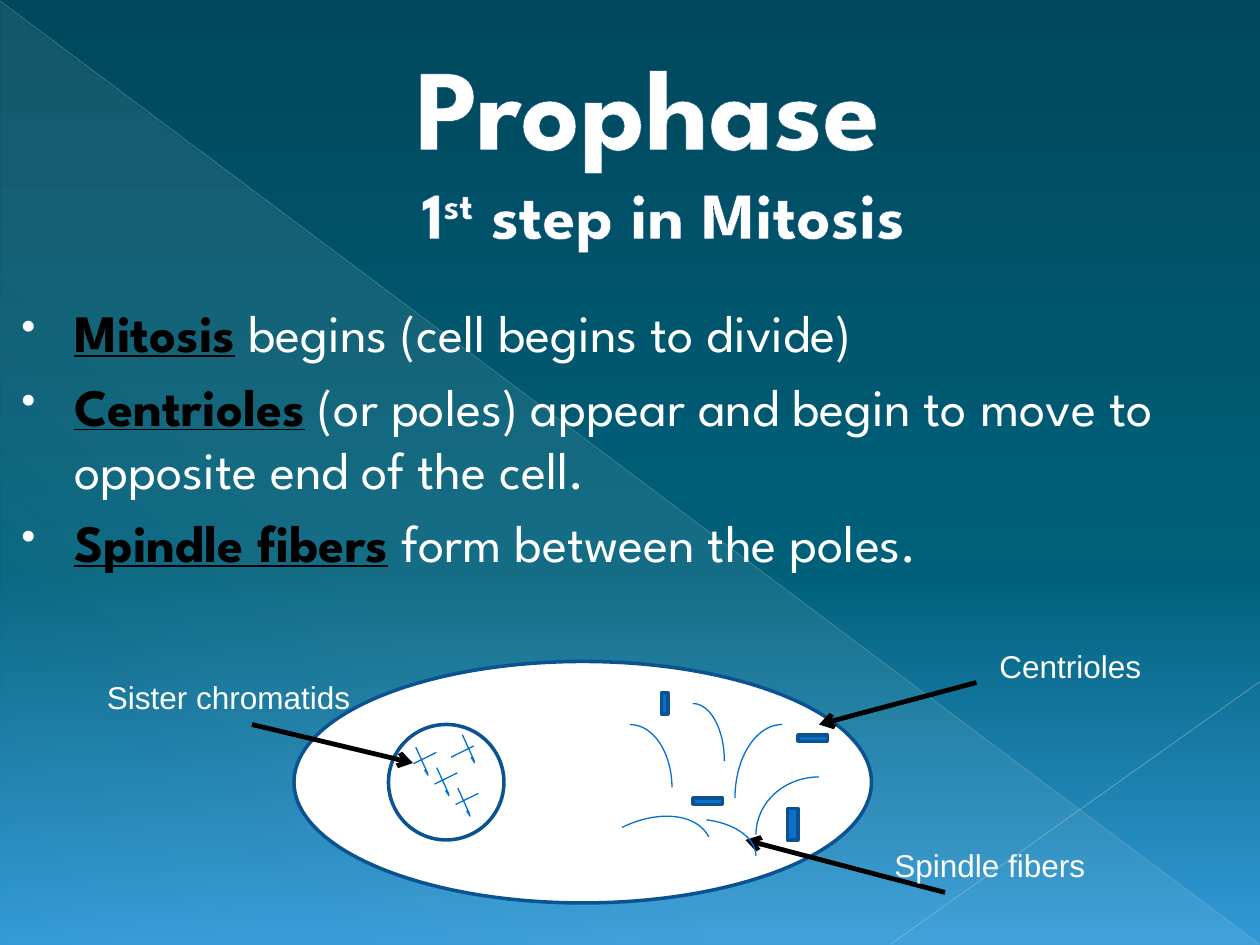
from lxml.etree import SubElement
from pptx import Presentation
from pptx.dml.color import RGBColor
from pptx.enum.shapes import MSO_CONNECTOR, MSO_SHAPE as Shape
from pptx.enum.text import MSO_ANCHOR as Anchor, PP_ALIGN as Align
from pptx.oxml.ns import qn
from pptx.util import Pt

WHITE = RGBColor(0xFF, 0xFF, 0xFF)
BLACK = RGBColor(0, 0, 0)
DEEP_TEAL = RGBColor(0x00, 0x48, 0x5C)
TEAL = RGBColor(0x00, 0x60, 0x7A)
SKY = RGBColor(0x32, 0x99, 0xD7)
PALE = RGBColor(0xDB, 0xF5, 0xF9)
LONG_RAY = RGBColor(0xAC, 0xC0, 0xCE)
SHORT_RAY = RGBColor(0xB5, 0xC7, 0xD3)
NAVY = RGBColor(0x0B, 0x52, 0x92)
TITLE_EDGE = RGBColor(0x0A, 0x4D, 0x89)
CENTRIOLE_BLUE = RGBColor(0x0F, 0x6F, 0xC6)
FIBER_BLUE = RGBColor(0x00, 0x70, 0xD5)
DISPLAY, LABEL = "League Spartan", "Arial"


def add_color(parent, color, alpha=100):
    node = SubElement(parent, qn("a:srgbClr"), val=str(color))
    if alpha < 100:
        SubElement(node, qn("a:alpha"), val=str(alpha * 1000))


def set_gradient(fill, owner, angle, stops):
    """Give the fill inside owner stops of (percent, colour, alpha)."""
    fill.gradient()
    gradient = owner.find(".//" + qn("a:gradFill"))
    stop_list = gradient.find(qn("a:gsLst"))
    for old in list(stop_list):
        stop_list.remove(old)
    for position, color, alpha in stops:
        stop = SubElement(stop_list, qn("a:gs"), pos=str(position * 1000))
        add_color(stop, color, alpha)
    gradient.find(qn("a:lin")).set("ang", str(angle * 60000))


def add_outlined(slide, kind, left, top, width, height, fill=None, line=NAVY, weight=2):
    shape = slide.shapes.add_shape(kind, Pt(left), Pt(top), Pt(width), Pt(height))
    style_outline(shape, fill, line, weight)
    return shape


def style_outline(shape, fill, line, weight):
    shape.shadow.inherit = False
    if fill is None:
        shape.fill.background()
    else:
        shape.fill.solid()
        shape.fill.fore_color.rgb = fill
    if line is None:
        shape.line.fill.background()
    else:
        shape.line.color.rgb = line
        shape.line.width = Pt(weight)


def add_line(slide, start, end, color, weight, alpha=100, arrow=False):
    connector = slide.shapes.add_connector(
        MSO_CONNECTOR.STRAIGHT, *(Pt(value) for value in (*start, *end)))
    connector.line.color.rgb = color
    connector.line.width = Pt(weight)
    properties = connector.element.spPr
    line = properties.find(qn("a:ln"))
    if alpha < 100:
        rgb = line.find(".//" + qn("a:srgbClr"))
        SubElement(rgb, qn("a:alpha"), val=str(alpha * 1000))
    if arrow:
        SubElement(line, qn("a:tailEnd"), type="arrow")
    SubElement(properties, qn("a:effectLst"))


def add_frame(slide, left, top, width, height, wrap=True, anchor=Anchor.TOP):
    frame = slide.shapes.add_textbox(Pt(left), Pt(top), Pt(width), Pt(height)).text_frame
    frame.word_wrap = wrap
    frame.vertical_anchor = anchor
    return frame


def write(paragraph, text, size=18, font=LABEL, color=WHITE, bold=False,
          underline=False, raised=0, edge=None):
    run = paragraph.add_run()
    run.text = text
    run.font.size = Pt(size)
    run.font.name = font
    run.font.bold = bold
    run.font.underline = underline
    run.font.color.rgb = color
    properties = run.font._element
    if raised:
        properties.set("baseline", str(raised * 1000))
    if edge is not None:
        outline = SubElement(properties, qn("a:ln"), w=str(Pt(0.5)))
        add_color(SubElement(outline, qn("a:solidFill")), edge)
        properties.insert(0, outline)


def draw_backdrop(slide, width, height):
    set_gradient(slide.background.fill, slide.element, 90,
                 [(0, DEEP_TEAL, 100), (60, TEAL, 100), (100, SKY, 100)])
    sheen = add_outlined(slide, Shape.RIGHT_TRIANGLE, 0.5, 1.2, width - 0.5, height - 1.2,
                         line=None)
    set_gradient(sheen.fill, sheen.element.spPr, 133,
                 [(0, PALE, 10), (70, PALE, 8), (100, PALE, 1)])
    add_line(slide, (0, 0.5), (width - 0.5, height - 0.5), LONG_RAY, 0.39, alpha=35)
    add_line(slide, (width, 389.5), (509, height - 0.5), SHORT_RAY, 0.47, alpha=45)


def draw_title(slide, left, top, width, height):
    heading = add_frame(slide, left, top, width, height, anchor=Anchor.MIDDLE).paragraphs[0]
    heading.alignment = Align.CENTER
    heading._p.get_or_add_pPr().set("marL", str(Pt(38)))
    style = dict(font=DISPLAY, bold=True, edge=TITLE_EDGE)
    write(heading, "Prophase ", size=65.7, **style)
    heading.add_line_break()
    for text, raised in (("1", 0), ("st", 30), (" step in Mitosis", 0)):
        write(heading, text, size=37.8, raised=raised, **style)


def draw_steps(slide, left, top, width, height):
    frame = add_frame(slide, left, top, width, height)
    steps = [
        ("Mitosis", " begins (cell begins to divide)"),
        ("Centrioles", " (or poles) appear and begin to move to opposite end of the cell."),
        ("Spindle fibers", " form between the poles."),
    ]
    for index, (term, explanation) in enumerate(steps):
        step = frame.add_paragraph() if index else frame.paragraphs[0]
        step.space_before = Pt(6)
        properties = step._p.get_or_add_pPr()
        properties.set("marL", str(Pt(35.3)))
        properties.set("indent", str(Pt(-30.2)))
        add_color(SubElement(properties, qn("a:buClr")), WHITE)
        SubElement(properties, qn("a:buSzPct"), val="80000")
        SubElement(properties, qn("a:buChar"), char="•")
        write(step, term, size=30, font=DISPLAY, color=BLACK, bold=True, underline=True)
        write(step, explanation, size=30, font=DISPLAY)


def draw_stroke(slide, points):
    (x, y), *rest = [(Pt(px), Pt(py)) for px, py in points]
    builder = slide.shapes.build_freeform(x, y)
    builder.add_line_segments(rest, close=False)
    style_outline(builder.convert_to_shape(), None, FIBER_BLUE, 0.75)


def draw_chromatid(slide, x, y, cross_x, cross_y):
    draw_stroke(slide, [(x, y), (x + 6.6, y + 14.5), (x + 7, y + 16), (x + 5, y + 13)])
    draw_stroke(slide, [(x + cross_x, y + cross_y), (x + cross_x - 13, y + cross_y + 6.4)])


def draw_fiber(slide, left, top, width, height, flip=False, turn=0, start=None):
    fiber = add_outlined(slide, Shape.ARC, left, top, width, height,
                         line=FIBER_BLUE, weight=0.75)
    fiber.rotation = turn
    if start is not None:
        fiber.adjustments[0] = start
    if flip:
        fiber.element.spPr.find(qn("a:xfrm")).set("flipH", "1")


def draw_cell(slide, left, top, width, height):
    add_outlined(slide, Shape.OVAL, left, top, width, height, fill=WHITE)
    add_outlined(slide, Shape.FLOWCHART_CONNECTOR, left + 54, top + 36, 66, 66)
    callouts = [
        ("Centrioles", (396, -12, 156), True, (390, 12), (300, 36)),
        ("Sister chromatids", (-114, 6, 155), False, (-24, 36), (68, 58)),
        ("Spindle fibers", (336, 102, 125), False, (372, 132), (258, 102)),
    ]
    for text, (x, y, label_width), wrap, start, end in callouts:
        start, end = ((left + px, top + py) for px, py in (start, end))
        add_line(slide, start, end, BLACK, 2.75, arrow=True)
        label = add_frame(slide, left + x, top + y, label_width, 29, wrap=wrap)
        write(label.paragraphs[0], text)
    for x, y, *cross in [(69.6, 49, 11.7, 3), (81.6, 60.7, 11.7, 3),
                         (93.6, 72.4, 11.7, 3), (96.2, 41.8, 6.5, 6.5)]:
        draw_chromatid(slide, left + x, top + y, *cross)
    fibers = [
        ((168, 36, 48, 72), {}),
        ((252, 36, 54, 84), dict(flip=True)),
        ((210, 24, 36, 66), {}),
        ((192, 90, 72, 42), dict(start=174.43)),
        ((264, 66, 72, 66), dict(flip=True)),
        ((172.5, 77, 54, 84), dict(flip=True, turn=63.4)),
    ]
    for (x, y, *size), options in fibers:
        draw_fiber(slide, left + x, top + y, *size, **options)
    for x, y, *size in [(210, 18, 3.6, 12), (288, 42, 16.8, 3.6),
                        (282, 84, 6, 18), (228, 78, 16.8, 3.6)]:
        add_outlined(slide, Shape.RECTANGLE, left + x, top + y, *size, fill=CENTRIOLE_BLUE)


def main():
    deck = Presentation()
    deck.slide_width, deck.slide_height = Pt(720), Pt(540)
    slide = deck.slides.add_slide(deck.slide_layouts[6])
    draw_backdrop(slide, 720, 540)
    draw_title(slide, 0, 12, 720, 140)
    draw_steps(slide, 0, 168, 720, 198)
    draw_cell(slide, 168, 378, 330, 138)
    deck.save("out.pptx")


if __name__ == "__main__":
    main()
